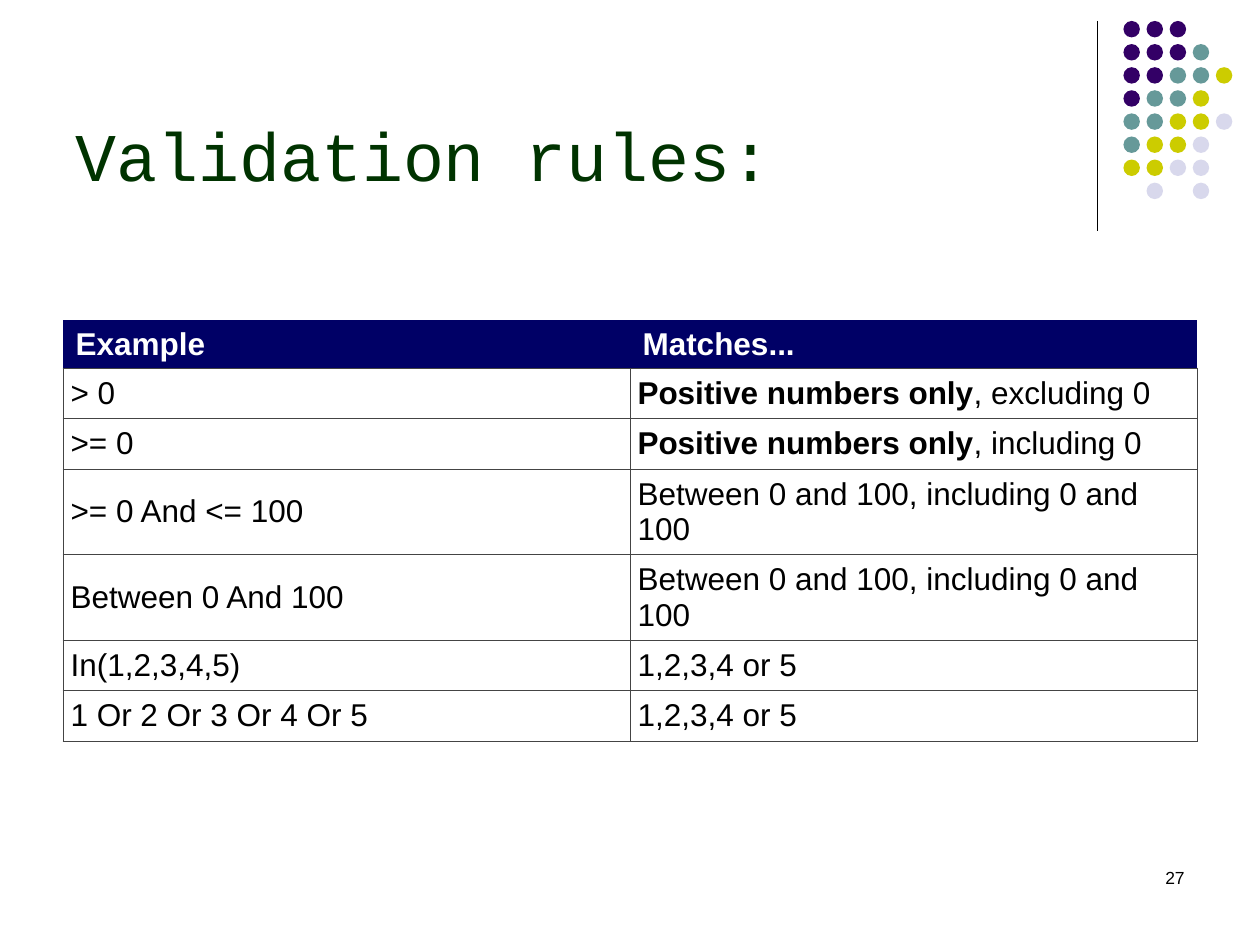
from dataclasses import dataclass

import pptx
import pptx.dml.color
import pptx.enum.shapes
import pptx.enum.text
import pptx.oxml.ns
import pptx.util
from lxml import etree

Pt = pptx.util.Pt
RGB = pptx.dml.color.RGBColor.from_string
ALIGN = pptx.enum.text.PP_ALIGN
ANCHOR = pptx.enum.text.MSO_ANCHOR
SHAPE = pptx.enum.shapes.MSO_SHAPE
qn = pptx.oxml.ns.qn


@dataclass(frozen=True)
class Theme:
    title_font: str = "Courier New"
    body_font: str = "Arial"
    title_size: float = 39
    body_size: float = 18
    number_size: float = 10
    title: str = "003300"
    text: str = "000000"
    header_text: str = "FFFFFF"
    header_fill: str = "000066"
    border: str = "444444"
    purple: str = "330066"
    teal: str = "669999"
    yellow: str = "CCCC00"
    lilac: str = "D8D8EC"


@dataclass(frozen=True)
class Label:
    text: str
    left: float
    top: float
    width: float
    height: float
    font: str
    size: float
    color: str
    align: ALIGN = ALIGN.LEFT
    anchor: ANCHOR = ANCHOR.TOP
    bottom_inset: float = 3.6


@dataclass(frozen=True)
class Rule:
    example: str
    match: str
    bold_lead: str = ""
    height: float = 28.6


THEME = Theme()

LABELS = [
    Label("27", 516, 492, 168, 36, THEME.body_font, THEME.number_size, THEME.text,
          align=ALIGN.RIGHT),
    Label("Validation rules:", 36, 9, 594, 102.5, THEME.title_font, THEME.title_size,
          THEME.title, anchor=ANCHOR.BOTTOM, bottom_inset=0),
]

RULES = [
    Rule("> 0", ", excluding 0", "Positive numbers only"),
    Rule(">= 0", ", including 0", "Positive numbers only"),
    Rule(">= 0 And <= 100", "Between 0 and 100, including 0 and 100", height=48.6),
    Rule("Between 0 And 100", "Between 0 and 100, including 0 and 100", height=48.6),
    Rule("In(1,2,3,4,5)", "1,2,3,4 or 5"),
    Rule("1 Or 2 Or 3 Or 4 Or 5", "1,2,3,4 or 5"),
]
HEADERS = ("Example", "Matches...")
HEADER_HEIGHT = 27.4
CELL_INSET = 4.32

# One letter per dot: purple, teal, yellow, lilac
DOT_ROWS = ["PPP", "PPPT", "PPTTY", "PTTY", "TTYYL", "TYYL", "YYLL", " L L"]
DOT_COLORS = {"P": THEME.purple, "T": THEME.teal, "Y": THEME.yellow, "L": THEME.lilac}
DOT_LEFT, DOT_TOP, DOT_PITCH, DOT_SIZE = 642, 12, 13.2, 9.4


def style_run(r, font: str, size: float, color: str, bold: bool = False) -> None:
    r.font.name = font
    r.font.size = Pt(size)
    r.font.bold = bold
    r.font.color.rgb = RGB(color)


def draw_divider(s) -> None:
    line = s.shapes.add_connector(pptx.enum.shapes.MSO_CONNECTOR.STRAIGHT,
                                  Pt(627), Pt(12), Pt(627), Pt(132))
    line.line.width = Pt(0.75)
    line.line.color.rgb = RGB(THEME.text)
    etree.SubElement(line._element.spPr, qn("a:effectLst"))


def draw_dots(s) -> None:
    group = s.shapes.add_group_shape()
    for row, letters in enumerate(DOT_ROWS):
        for col, letter in enumerate(letters):
            if letter not in DOT_COLORS:
                continue
            dot = group.shapes.add_shape(
                SHAPE.OVAL, Pt(DOT_LEFT + col * DOT_PITCH), Pt(DOT_TOP + row * DOT_PITCH),
                Pt(DOT_SIZE), Pt(DOT_SIZE))
            dot.shadow.inherit = False
            dot.fill.solid()
            dot.fill.fore_color.rgb = RGB(DOT_COLORS[letter])
            dot.line.fill.background()


def draw_label(s, label: Label) -> None:
    sp = s.shapes.add_textbox(Pt(label.left), Pt(label.top), Pt(label.width), Pt(label.height))
    tf = sp.text_frame
    tf.word_wrap = True
    tf.vertical_anchor = label.anchor
    tf.margin_bottom = Pt(label.bottom_inset)
    tf.text = label.text
    p = tf.paragraphs[0]
    p.alignment = label.align
    style_run(p.runs[0], label.font, label.size, label.color)


def set_borders(cell, visible: str) -> None:
    """Draw the named sides (from LRTB) and clear the others."""
    tc_pr = cell._tc.get_or_add_tcPr()
    for side in "LRTB":
        ln = etree.SubElement(tc_pr, qn(f"a:ln{side}"), w=str(Pt(0.6)))
        if side in visible:
            fill = etree.SubElement(ln, qn("a:solidFill"))
            etree.SubElement(fill, qn("a:srgbClr"), val=THEME.border)
        else:
            etree.SubElement(ln, qn("a:noFill"))


def fill_header(cell, text: str) -> None:
    set_borders(cell, "B")
    cell.fill.solid()
    cell.fill.fore_color.rgb = RGB(THEME.header_fill)
    cell.vertical_anchor = ANCHOR.MIDDLE
    cell.text_frame.text = text
    style_run(cell.text_frame.paragraphs[0].runs[0], THEME.body_font, THEME.body_size,
              THEME.header_text, bold=True)


def fill_body(cell, text: str, bold_lead: str = "") -> None:
    set_borders(cell, "LRTB")
    cell.fill.background()
    cell.vertical_anchor = ANCHOR.MIDDLE
    cell.margin_left = cell.margin_right = Pt(CELL_INSET)
    cell.margin_top = cell.margin_bottom = Pt(CELL_INSET)
    p = cell.text_frame.paragraphs[0]
    for part, bold in ((bold_lead, True), (text, False)):
        if part:
            r = p.add_run()
            r.text = part
            style_run(r, THEME.body_font, THEME.body_size, THEME.text, bold)


def draw_rules(s) -> None:
    heights = [HEADER_HEIGHT] + [rule.height for rule in RULES]
    table = s.shapes.add_table(len(heights), len(HEADERS), Pt(36), Pt(183),
                               Pt(648), Pt(sum(heights))).table
    table.first_row = table.horz_banding = False
    for row, height in zip(table.rows, heights):
        row.height = Pt(height)
    for col, text in enumerate(HEADERS):
        fill_header(table.cell(0, col), text)
    for i, rule in enumerate(RULES, start=1):
        fill_body(table.cell(i, 0), rule.example)
        fill_body(table.cell(i, 1), rule.match, rule.bold_lead)


def main() -> None:
    prs = pptx.Presentation()
    prs.slide_width, prs.slide_height = Pt(720), Pt(540)
    s = prs.slides.add_slide(prs.slide_layouts[6])

    # Corner decoration
    draw_divider(s)
    draw_dots(s)

    # Content
    draw_rules(s)
    for label in LABELS:
        draw_label(s, label)

    prs.save("out.pptx")


if __name__ == "__main__":
    main()
